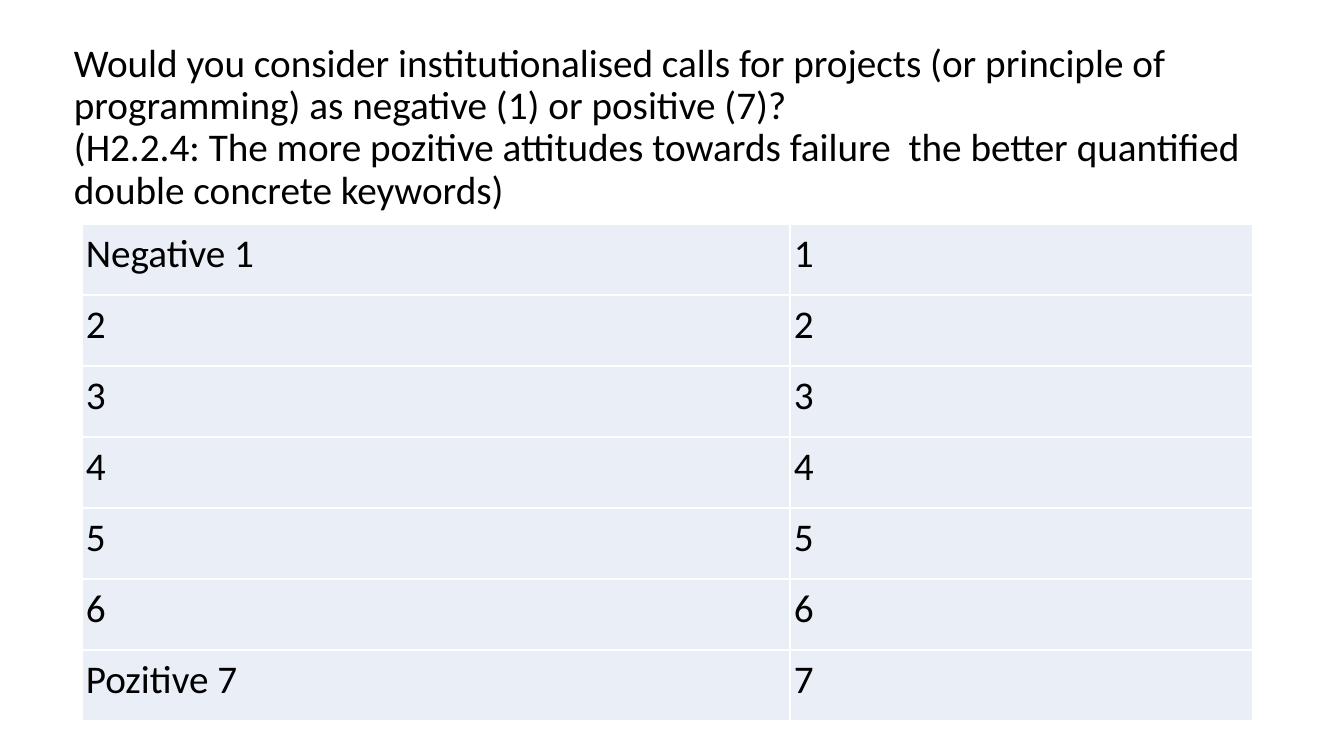
from lxml.etree import SubElement
from pptx import Presentation
from pptx.dml.color import RGBColor
from pptx.enum.text import MSO_ANCHOR as Anchor
from pptx.oxml.ns import qn
from pptx.util import Emu, Pt

TITLE = (
    "Would you consider institutionalised calls for projects (or principle of "
    "programming) as negative (1) or positive (7)?\v"
    "(H2.2.4: The more pozitive attitudes towards failure  the better quantified "
    "double concrete keywords)"
)
ROWS = [
    ("Negative 1", "1"),
    ("2", "2"),
    ("3", "3"),
    ("4", "4"),
    ("5", "5"),
    ("6", "6"),
    ("Pozitive 7", "7"),
]
FONT, SIZE = "Calibri", 28
INK, FILL, LINE = "000000", "EAEFF7", "FFFFFF"

SLIDE = (1344, 756)
TITLE_BOX = (64, 13, 1188, 230)
LEFT, TOP = 82, 224
COLS = (708, 463)
ROW_H = 71
INSET = 4


def px(n):
    return Emu(round(n * 914400 / 100.8))


def color(code):
    return RGBColor.from_string(code)


def style(frame, spacing, after=0):
    for para in frame.paragraphs:
        para.line_spacing = spacing
        para.space_after = Pt(after)
        for run in para.runs:
            run.font.name = FONT
            run.font.size = Pt(SIZE)
            run.font.color.rgb = color(INK)


def border(cell):
    """Draw a thin line on all four sides; call before setting the fill."""
    props = cell._tc.get_or_add_tcPr()
    for side in ("lnL", "lnR", "lnT", "lnB"):
        line = SubElement(props, qn(f"a:{side}"), w=str(Pt(1)))
        solid = SubElement(line, qn("a:solidFill"))
        SubElement(solid, qn("a:srgbClr"), val=LINE)


def add_title(slide):
    frame = slide.shapes.add_textbox(*map(px, TITLE_BOX)).text_frame
    frame.word_wrap = True
    frame.vertical_anchor = Anchor.MIDDLE
    frame.text = TITLE
    style(frame, 0.9)


def add_scale(slide):
    box = (LEFT, TOP, sum(COLS), ROW_H * len(ROWS))
    table = slide.shapes.add_table(len(ROWS), len(COLS), *map(px, box)).table
    table.first_row = table.horz_banding = False
    for col, width in zip(table.columns, COLS):
        col.width = px(width)
    for row, texts in zip(table.rows, ROWS):
        row.height = px(ROW_H)
        for cell, text in zip(row.cells, texts):
            border(cell)
            cell.fill.solid()
            cell.fill.fore_color.rgb = color(FILL)
            cell.margin_left = cell.margin_right = px(INSET)
            cell.margin_top = cell.margin_bottom = px(INSET)
            cell.text_frame.text = text
            style(cell.text_frame, 1.05, 8)


def main():
    deck = Presentation()
    deck.slide_width, deck.slide_height = map(px, SLIDE)
    slide = deck.slides.add_slide(deck.slide_layouts[6])
    add_title(slide)
    add_scale(slide)
    deck.save("out.pptx")


if __name__ == "__main__":
    main()
